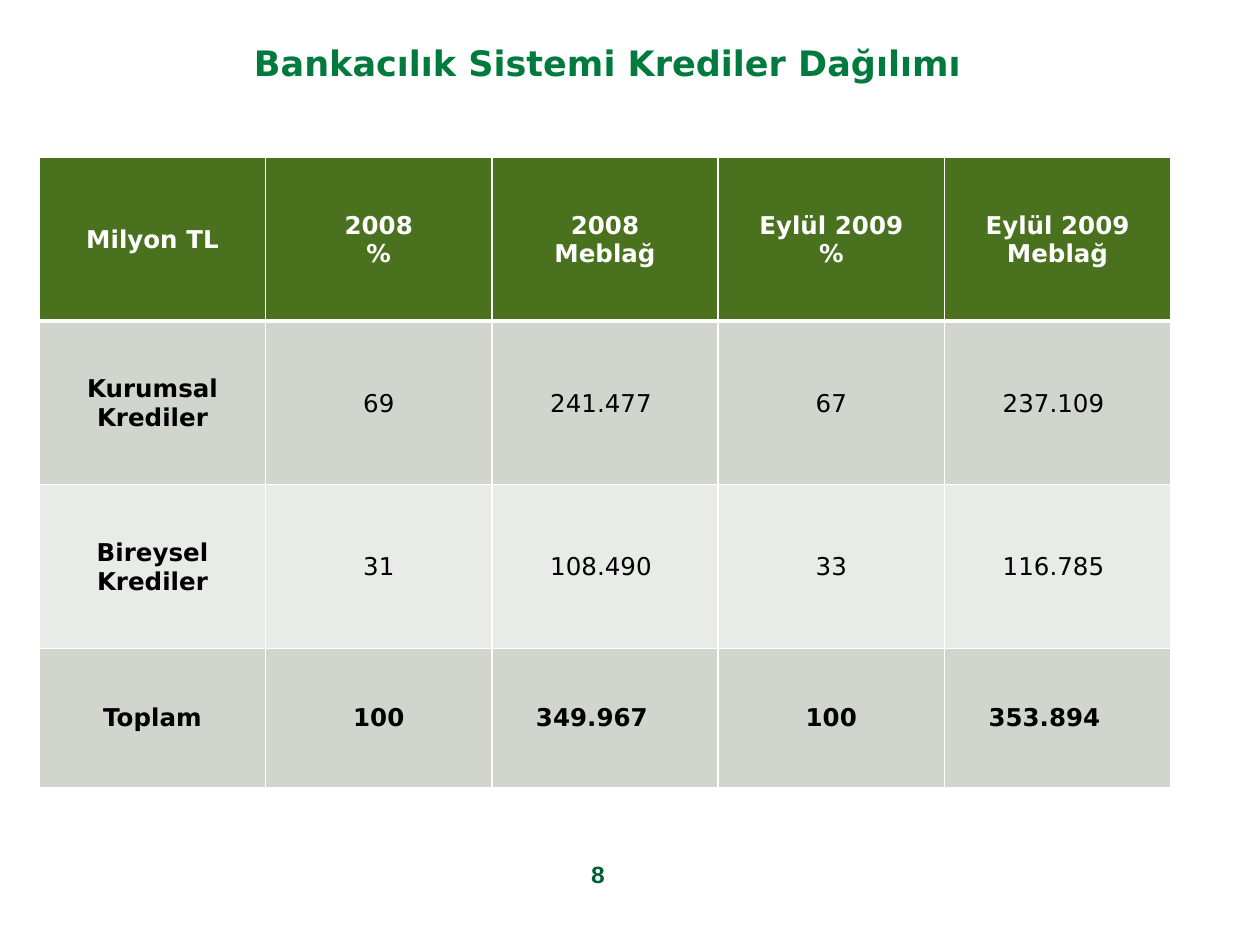
from dataclasses import dataclass

from lxml import etree
from pptx import Presentation
from pptx import util as u
from pptx.dml import color
from pptx.enum import text
from pptx.oxml import ns

SANS = "DejaVu Sans"
WHITE, BLACK = "FFFFFF", "000000"
HEADER_FILL, BAND_FILLS = "49711E", ("D0D5CD", "E9EBE8")
TABLE_WIDTH = 646.5
ROW_HEIGHTS = (93.5, 93.5, 93.5, 79.5)
CELL_INSET = 0.72
AMOUNT_COLUMNS = (2, 4)
AMOUNT_INSET, TOTAL_INSET = 5.3, 15.7
ROWS = (
    ("Milyon TL", "2008\n%", "2008\nMeblağ", "Eylül 2009\n%", "Eylül 2009 Meblağ"),
    ("Kurumsal Krediler", "69", "241.477", "67", "237.109"),
    ("Bireysel Krediler", "31", "108.490", "33", "116.785"),
    ("Toplam", "100", "349.967", "100", "353.894"),
)


@dataclass
class Style:
    size: float
    color: str
    bold: bool = True
    font: str = SANS


@dataclass
class Label:
    content: str
    left: float
    top: float
    width: float
    height: float
    style: Style
    anchor: text.MSO_ANCHOR
    right_inset: float = 7.2
    line_spacing: float = 1.0


LABELS = (
    Label("Bankacılık Sistemi Krediler Dağılımı", 34, 11.5, 648, 48,
          Style(20, "007A3D"), text.MSO_ANCHOR.MIDDLE, right_inset=28.6),
    Label("8", 257.8, 491, 167.8, 37.4,
          Style(14, "005E31", font="Courier New"), text.MSO_ANCHOR.TOP, line_spacing=0.76),
)


def rgb(value: str) -> color.RGBColor:
    return color.RGBColor.from_string(value)


def write_text(frame, content: str, style: Style, line_spacing: float = 1.0) -> None:
    frame.word_wrap = True
    frame.text = content
    for paragraph in frame.paragraphs:
        paragraph.alignment = text.PP_ALIGN.CENTER
        paragraph.line_spacing = line_spacing
        for run in paragraph.runs:
            run.font.name = style.font
            run.font.size = u.Pt(style.size)
            run.font.bold = style.bold
            run.font.color.rgb = rgb(style.color)


def add_label(slide, label: Label) -> None:
    box = slide.shapes.add_textbox(
        u.Pt(label.left), u.Pt(label.top), u.Pt(label.width), u.Pt(label.height))
    frame = box.text_frame
    frame.vertical_anchor = label.anchor
    frame.margin_right = u.Pt(label.right_inset)
    write_text(frame, label.content, label.style, label.line_spacing)


def set_borders(cell, row_index: int) -> None:
    widths = {"L": 1, "R": 1, "T": 3 if row_index == 1 else 1, "B": 3 if row_index == 0 else 1}
    properties = cell._tc.get_or_add_tcPr()
    for side, width in widths.items():
        line = etree.SubElement(properties, ns.qn(f"a:ln{side}"), w=str(u.Pt(width)))
        fill = etree.SubElement(line, ns.qn("a:solidFill"))
        etree.SubElement(fill, ns.qn("a:srgbClr"), val=WHITE)


def format_cell(cell, content: str, row_index: int, column_index: int) -> None:
    is_header = row_index == 0
    is_total = row_index == len(ROWS) - 1
    set_borders(cell, row_index)
    cell.fill.solid()
    cell.fill.fore_color.rgb = rgb(HEADER_FILL if is_header else BAND_FILLS[(row_index - 1) % 2])
    cell.vertical_anchor = text.MSO_ANCHOR.MIDDLE
    cell.margin_left = cell.margin_right = cell.margin_top = u.Pt(CELL_INSET)
    cell.margin_bottom = u.Pt(0)
    if column_index in AMOUNT_COLUMNS and not is_header:
        cell.margin_right = u.Pt(TOTAL_INSET if is_total else AMOUNT_INSET)
    bold = is_header or is_total or column_index == 0
    write_text(cell.text_frame, content, Style(14, WHITE if is_header else BLACK, bold))


def add_loan_table(slide) -> None:
    column_count = len(ROWS[0])
    table = slide.shapes.add_table(
        len(ROWS), column_count, u.Pt(22.5), u.Pt(90),
        u.Pt(TABLE_WIDTH), u.Pt(sum(ROW_HEIGHTS))).table
    for column in table.columns:
        column.width = u.Pt(TABLE_WIDTH / column_count)
    for row_index, (values, height) in enumerate(zip(ROWS, ROW_HEIGHTS)):
        table.rows[row_index].height = u.Pt(height)
        for column_index, content in enumerate(values):
            format_cell(table.cell(row_index, column_index), content, row_index, column_index)


def main() -> None:
    presentation = Presentation()
    presentation.slide_width, presentation.slide_height = u.Pt(720), u.Pt(540)
    slide = presentation.slides.add_slide(presentation.slide_layouts[6])
    for label in LABELS:
        add_label(slide, label)
    add_loan_table(slide)
    presentation.save("out.pptx")


if __name__ == "__main__":
    main()
